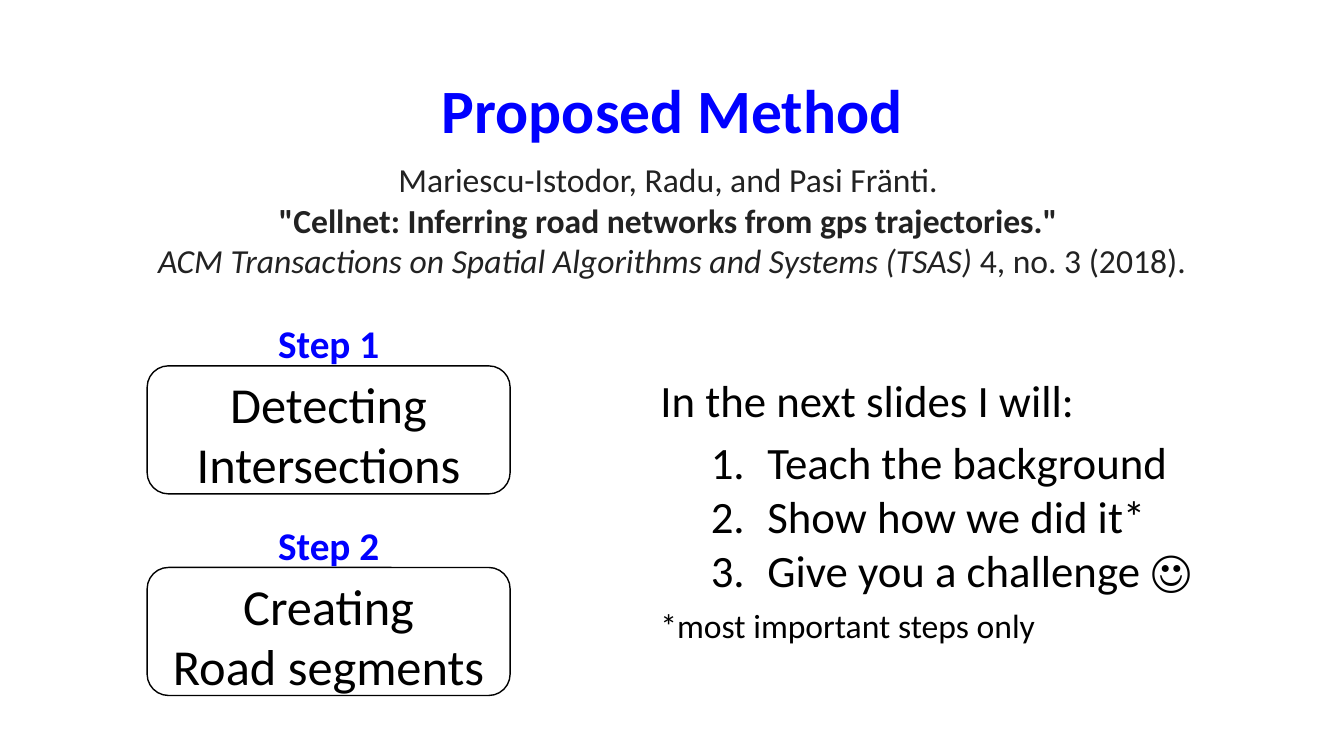
from pptx import Presentation
from pptx.dml.color import RGBColor
from pptx.enum.shapes import MSO_SHAPE as SHAPE
from pptx.enum.text import MSO_ANCHOR as ANCHOR, MSO_AUTO_SIZE as AUTO, PP_ALIGN as ALIGN
from pptx.oxml.ns import qn
from pptx.util import Inches, Pt
from lxml.etree import SubElement

BLUE = RGBColor(0x00, 0x00, 0xFF)
BLACK = RGBColor(0x00, 0x00, 0x00)
GREY = RGBColor(0x22, 0x22, 0x22)
WHITE = RGBColor(0xFF, 0xFF, 0xFF)


def place(sp, left, top, width, height):
    sp.left, sp.top, sp.width, sp.height = (Inches(v) for v in (left, top, width, height))


def add_run(p, text, size, color, **formats):
    r = p.add_run()
    r.text = text
    r.font.color.rgb = color
    for name, value in {"name": "Calibri", "size": Pt(size), **formats}.items():
        setattr(r.font, name, value)


prs = Presentation()
prs.slide_width, prs.slide_height = Inches(13.33), Inches(7.5)
slide = prs.slides.add_slide(prs.slide_layouts[1])

# Title
title = slide.shapes.title
place(title, 0.92, 0.4, 11.5, 1.45)
title.text_frame.vertical_anchor = ANCHOR.MIDDLE
p = title.text_frame.paragraphs[0]
p.alignment, p.line_spacing = ALIGN.CENTER, 0.9
add_run(p, "Proposed Method", 44, BLUE, bold=True)

# Reference
reference = [
    [("Mariescu-Istodor, Radu, and Pasi Fränti. ", {})],
    [('"Cellnet: Inferring road networks from gps trajectories." ', {"bold": True})],
    [("ACM Transactions on Spatial Algorithms and Systems (TSAS)", {"italic": True}),
     (" 4, no. 3 (2018).", {})],
]
tf = slide.shapes.add_textbox(*(Inches(v) for v in (0.98, 1.53, 11.37, 1.31))).text_frame
tf.word_wrap = True
for i, runs in enumerate(reference):
    p = tf.add_paragraph() if i else tf.paragraphs[0]
    p.alignment = ALIGN.CENTER
    for text, formats in runs:
        add_run(p, text, 24, GREY, **formats)

# Steps: a label above each rounded box
STEP_LEFT, STEP_TOP, STEP_PITCH, STEP_WIDTH = 1.46, 3.12, 2.0, 3.6
steps = [("Detecting", "Intersections"), ("Creating", "Road segments")]
for n, lines in enumerate(steps):
    top = STEP_TOP + n * STEP_PITCH
    sp = slide.shapes.add_shape(SHAPE.ROUNDED_RECTANGLE, Inches(STEP_LEFT), Inches(top + 0.51),
                                Inches(STEP_WIDTH), Inches(1.27))
    sp.shadow.inherit = False
    sp.fill.solid()
    sp.fill.fore_color.rgb = WHITE
    sp.line.color.rgb = BLACK
    sp.line.width = Pt(1)
    tf = sp.text_frame
    tf.word_wrap, tf.vertical_anchor = False, ANCHOR.TOP
    tf.margin_top = tf.margin_bottom = Inches(0.01)
    for i, line in enumerate(lines):
        p = tf.add_paragraph() if i else tf.paragraphs[0]
        p.alignment = ALIGN.CENTER
        add_run(p, line, 36, BLACK)

    label = slide.shapes.add_textbox(Inches(STEP_LEFT + (STEP_WIDTH - 1.22) / 2), Inches(top),
                                     Inches(1.22), Inches(0.57))
    label.text_frame.word_wrap = False
    p = label.text_frame.paragraphs[0]
    p.alignment = ALIGN.CENTER
    add_run(p, f"Step {n + 1}", 28, BLUE, bold=True)

# Agenda: text, level, size, space after
agenda = [
    ("In the next slides I will:", 0, 32, 6),
    ("Teach the background", 1, 32, 0),
    ("Show how we did it*", 1, 32, 0),
    ("Give you a challenge ☺", 1, 32, 6),
    ("*most important steps only", 0, 24, 0),
]
body = slide.placeholders[1]
place(body, 6.45, 3.65, 5.56, 2.81)
tf = body.text_frame
tf.word_wrap, tf.auto_size, tf.vertical_anchor = False, AUTO.NONE, ANCHOR.TOP
for i, (text, level, size, after) in enumerate(agenda):
    p = tf.add_paragraph() if i else tf.paragraphs[0]
    pPr = p._p.get_or_add_pPr()
    pPr.set("marL", str(Inches(1.06 * level)))
    pPr.set("indent", str(Inches(-0.56 * level)))
    if level:
        SubElement(pPr, qn("a:buFont"), typeface="+mj-lt")
        SubElement(pPr, qn("a:buAutoNum"), type="arabicPeriod")
    else:
        SubElement(pPr, qn("a:buNone"))
    formats = {"level": level, "alignment": ALIGN.LEFT, "line_spacing": 1.0,
               "space_before": Pt(0), "space_after": Pt(after)}
    for name, value in formats.items():
        setattr(p, name, value)
    add_run(p, text, size, BLACK)

prs.save("out.pptx")
